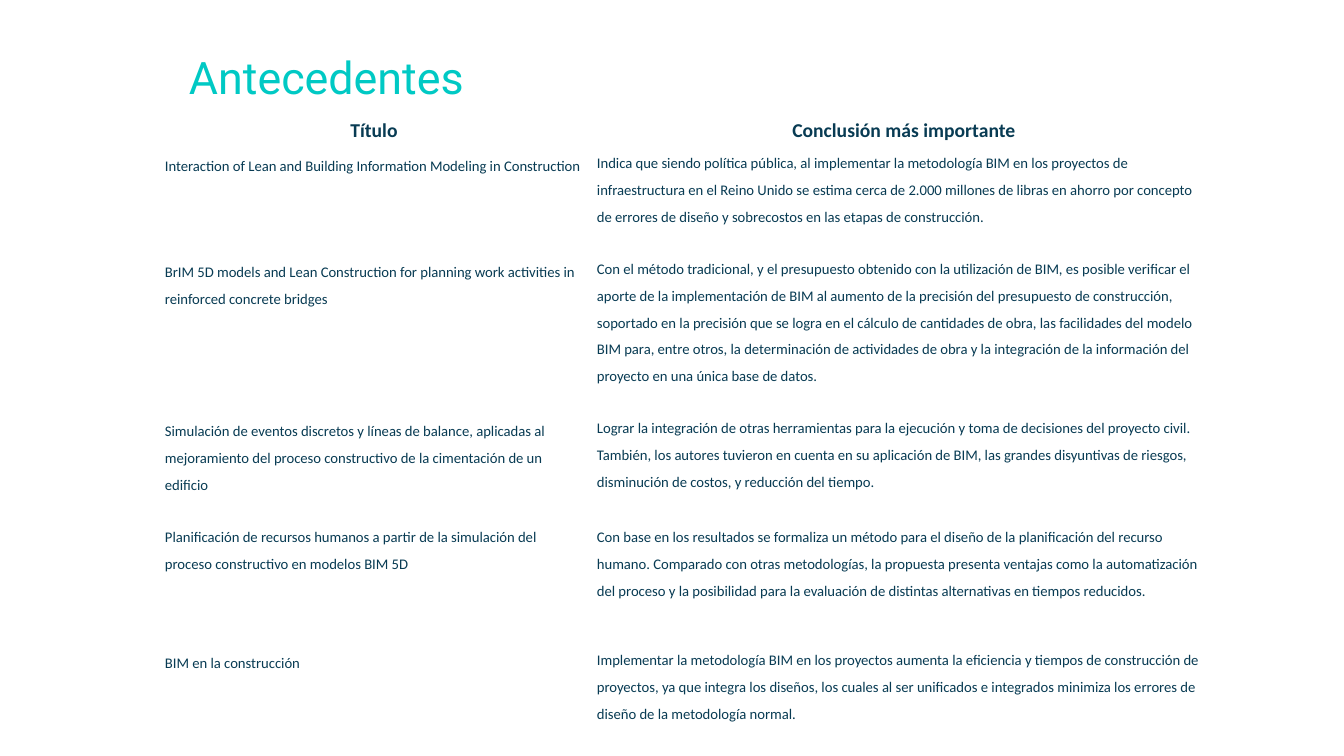
from pptx import Presentation
from pptx.dml.color import RGBColor as RGB
from pptx.enum.text import PP_ALIGN as AL
from pptx.util import Pt

SCALE = 914400 / 100.8
COLORS = {"title": "00C9C4", "text": "083B53", "back": "FFFFFF"}


def px(n):
    return round(n * SCALE)


def style(p, font, size, color, bold=False):
    p.font.name, p.font.size, p.font.bold = font, Pt(size), bold
    p.font.color.rgb = RGB.from_string(COLORS[color])


prs = Presentation()
prs.slide_width, prs.slide_height = px(1344), px(756)
s = prs.slides.add_slide(prs.slide_layouts[6])
s.background.fill.solid()
s.background.fill.fore_color.rgb = RGB.from_string(COLORS["back"])

# Title
tf = s.shapes.add_textbox(px(179), px(51), px(433), px(176)).text_frame
tf.word_wrap = True
p = tf.paragraphs[0]
p.text = "Antecedentes"
p.line_spacing = 0.9
style(p, "Roboto", 32, "title")

# Table content: row height, study, main conclusion
rows = [
    (34, "Título", "Conclusión más importante"),
    (106, "Interaction of Lean and Building Information Modeling in Construction",
     "Indica que siendo política pública, al implementar la metodología BIM en los "
     "proyectos de infraestructura en el Reino Unido se estima cerca de 2.000 millones "
     "de libras en ahorro por concepto de errores de diseño y sobrecostos en las etapas "
     "de construcción."),
    (159, "BrIM 5D models and Lean Construction for planning work activities in "
     "reinforced concrete bridges",
     "Con el método tradicional, y el presupuesto obtenido con la utilización de BIM, es "
     "posible verificar el aporte de la implementación de BIM al aumento de la precisión "
     "del presupuesto de construcción, soportado en la precisión que se logra en el "
     "cálculo de cantidades de obra, las facilidades del modelo BIM para, entre otros, la "
     "determinación de actividades de obra y la integración de la información del "
     "proyecto en una única base de datos."),
    (106, "Simulación de eventos discretos y líneas de balance, aplicadas al mejoramiento "
     "del proceso constructivo de la cimentación de un edificio",
     "Lograr la integración de otras herramientas para la ejecución y toma de decisiones "
     "del proyecto civil. También, los autores tuvieron en cuenta en su aplicación de "
     "BIM, las grandes disyuntivas de riesgos, disminución de costos, y reducción del "
     "tiempo."),
    (126, "Planificación de recursos humanos a partir de la simulación del proceso "
     "constructivo en modelos BIM 5D",
     "Con base en los resultados se formaliza un método para el diseño de la "
     "planificación del recurso humano. Comparado con otras metodologías, la propuesta "
     "presenta ventajas como la automatización del proceso y la posibilidad para la "
     "evaluación de distintas alternativas en tiempos reducidos."),
    (82, "BIM en la construcción",
     "Implementar la metodología BIM en los proyectos aumenta la eficiencia y tiempos de "
     "construcción de proyectos, ya que integra los diseños, los cuales al ser unificados "
     "e integrados minimiza los errores de diseño de la metodología normal."),
]
HEADER_ROW, PLANNING_ROW = 0, 4

# Table
height = sum(row[0] for row in rows)
table = s.shapes.add_table(len(rows), 2, px(158), px(112), px(1060), px(height)).table
table.first_row = table.horz_banding = False
for column, width in zip(table.columns, (432, 628)):
    column.width = px(width)

for i, (row_height, *texts) in enumerate(rows):
    table.rows[i].height = px(row_height)
    header = i == HEADER_ROW
    for j, text in enumerate(texts):
        cell = table.cell(i, j)
        cell.fill.background()
        padded = j == 0 or i in (HEADER_ROW, PLANNING_ROW)
        cell.margin_left = cell.margin_right = px(7)
        cell.margin_top = cell.margin_bottom = px(3 if padded else 0)
        p = cell.text_frame.paragraphs[0]
        p.text = text
        p.alignment = AL.CENTER if header else AL.LEFT
        p.line_spacing = 1.15 if header else 1.5
        p.space_after = Pt(10 if padded else 0)
        style(p, "Calibri", 14 if header else 10.5, "text", header)

prs.save("out.pptx")
